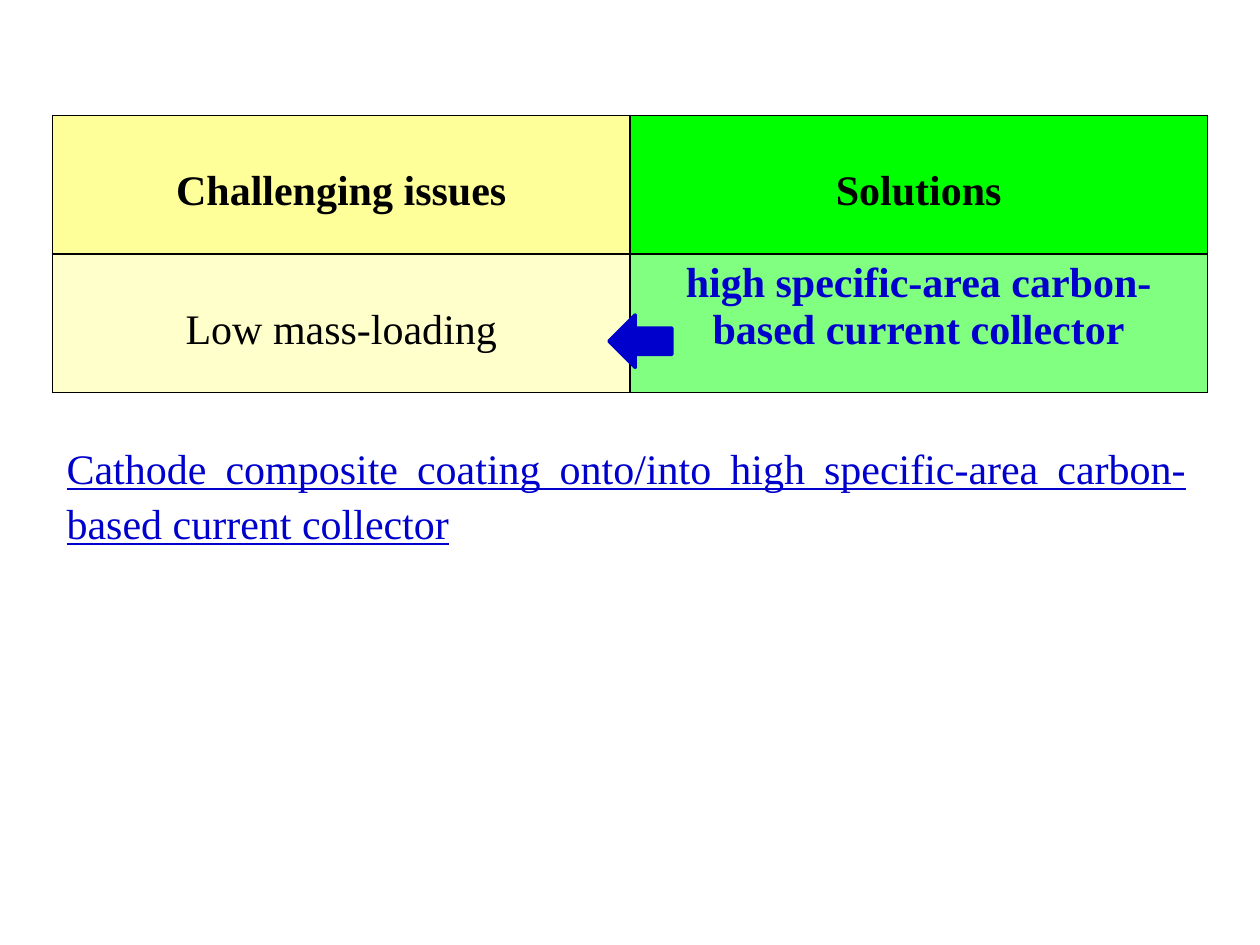
from lxml import etree
from pptx import Presentation
from pptx import util as u
from pptx.dml.color import RGBColor
from pptx.enum import shapes, text
from pptx.oxml.ns import qn

Pt = u.Pt
BLACK = RGBColor(0x00, 0x00, 0x00)
BLUE = RGBColor(0x00, 0x00, 0xCC)
YELLOW = RGBColor(0xFF, 0xFF, 0x99)
PALE_YELLOW = RGBColor(0xFF, 0xFF, 0xCC)
GREEN = RGBColor(0x00, 0xFF, 0x00)
PALE_GREEN = RGBColor(0x80, 0xFF, 0x80)


def add_text(p, words, color, bold=False, underline=False):
    r = p.add_run()
    r.text = words
    f = r.font
    f.name, f.size, f.bold, f.underline = "Times New Roman", Pt(24), bold, underline
    f.color.rgb = color


def add_borders(cell):
    tcPr = cell._tc.get_or_add_tcPr()
    for i, side in enumerate(("a:lnL", "a:lnR", "a:lnT", "a:lnB")):
        ln = etree.Element(qn(side), w=str(Pt(1)))
        fill = etree.SubElement(ln, qn("a:solidFill"))
        etree.SubElement(fill, qn("a:srgbClr"), val=str(BLACK))
        tcPr.insert(i, ln)  # borders come before the fill


prs = Presentation()
prs.slide_width, prs.slide_height = Pt(720), Pt(540)
s = prs.slides.add_slide(prs.slide_layouts[6])

# Table of issues and solutions: words, text colour, bold, fill, top margin
rows = [
    [("Challenging issues", BLACK, True, YELLOW, 30.2),
     ("Solutions", BLACK, True, GREEN, 30.2)],
    [("Low mass-loading", BLACK, False, PALE_YELLOW, 30.2),
     ("high specific-area carbon-based current collector", BLUE, True, PALE_GREEN, 3.6)],
]
tbl = s.shapes.add_table(2, 2, Pt(30), Pt(66), Pt(660), Pt(158.4)).table
for i, row in enumerate(rows):
    for j, (words, color, bold, fill, top) in enumerate(row):
        cell = tbl.cell(i, j)
        cell.fill.solid()
        cell.fill.fore_color.rgb = fill
        cell.margin_top = Pt(top)
        add_borders(cell)
        p = cell.text_frame.paragraphs[0]
        p.alignment = text.PP_ALIGN.CENTER
        add_text(p, words, color, bold)

# Statement below the table
sp = s.shapes.add_textbox(Pt(31), Pt(246.2), Pt(654), Pt(65.5))
tf = sp.text_frame
tf.word_wrap = True
tf.auto_size = text.MSO_AUTO_SIZE.SHAPE_TO_FIT_TEXT
p = tf.paragraphs[0]
p.alignment = text.PP_ALIGN.JUSTIFY
p.line_spacing = 1.1
add_text(p, "Cathode composite coating onto/into high specific-area "
            "carbon-based current collector", BLUE, underline=True)

# Arrow from solution to issue
sp = s.shapes.add_shape(shapes.MSO_SHAPE.LEFT_ARROW, Pt(348), Pt(180), Pt(36), Pt(30))
sp.shadow.inherit = False
sp.fill.solid()
sp.fill.fore_color.rgb = BLUE
sp.line.color.rgb = BLUE
sp.line.width = Pt(2)

prs.save("out.pptx")
